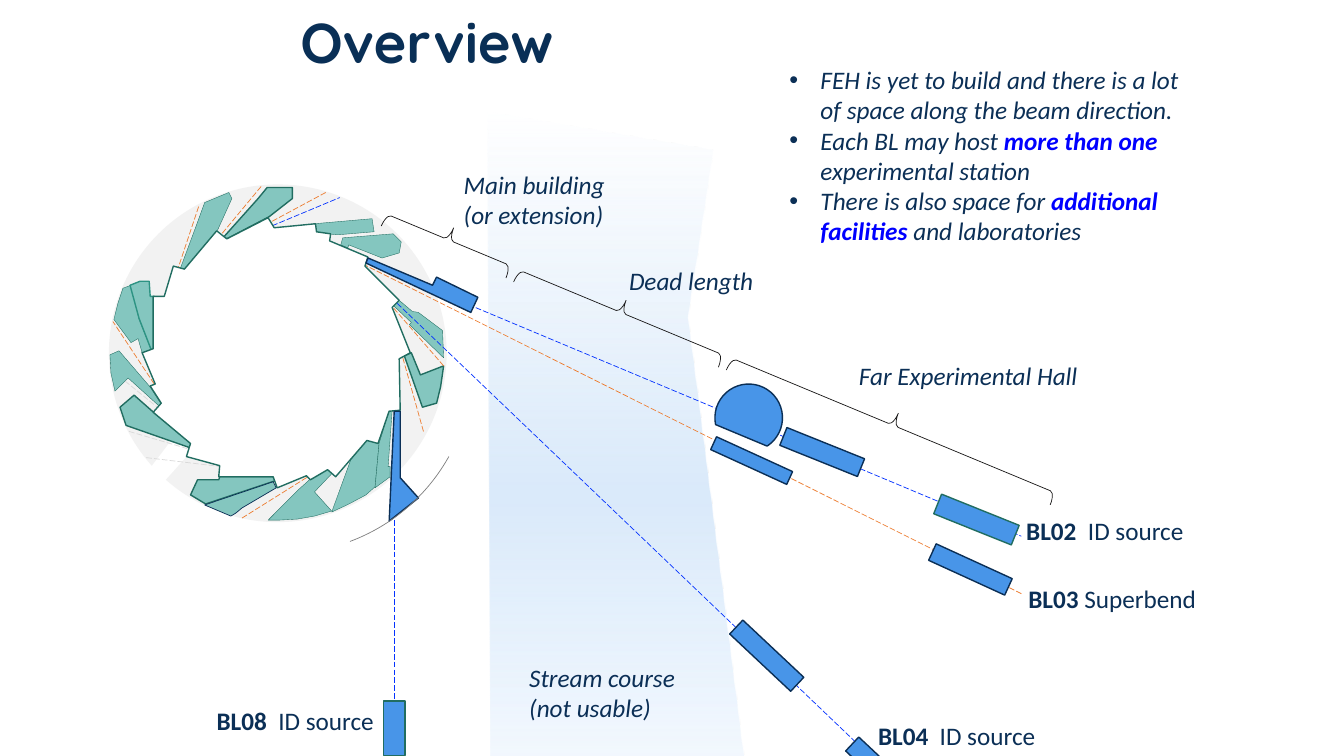
from dataclasses import dataclass

from lxml import etree
from pptx import Presentation
from pptx.dml.color import RGBColor
from pptx.enum.dml import MSO_LINE_DASH_STYLE as Dash
from pptx.enum.shapes import MSO_CONNECTOR, MSO_SHAPE as Preset
from pptx.enum.text import MSO_AUTO_SIZE
from pptx.oxml import parse_xml
from pptx.oxml.ns import nsdecls, qn
from pptx.util import Inches, Pt

COLORS = {"title": "092F56", "navy": "0B2F56", "emphasis": "0000FF", "station": "4895E8",
          "hall": "84C6BF", "hall_edge": "216D61", "hall_light_edge": "2D9383",
          "floor": "F2F2F2", "white": "FFFFFF", "id_beam": "0432FF", "bend_beam": "ED7D31",
          "unused_beam": "D9D9D9", "brace": "181717", "arc": "808080",
          "stream": "DAEAFA", "stream_end": "D8EAFD"}

# Each hall: edge colour, edge width, corners
RING_HALLS = [
    ("hall_edge", 0.25, [(3.26, 4.65), (3.07, 4.76), (2.97, 4.85), (2.66, 5.16), (2.77, 5.16), (2.95, 5.15),
                         (3.12, 5.12), (3.29, 5.07), (3.12, 4.88), (3.3, 4.69)]),
    ("hall_edge", 0.25, [(3.64, 4.36), (3.48, 4.56), (3.29, 5.08), (3.42, 5.02), (3.48, 4.99), (3.63, 4.91),
                         (3.72, 4.83), (3.76, 4.4)]),
    ("hall_edge", 0.25, [(3.86, 4.07), (3.76, 4.4), (3.72, 4.84), (3.87, 4.73), (3.87, 4.63), (3.85, 4.63),
                         (3.89, 4.07)]),
    ("hall_edge", 1, [(4.01, 3.53), (4.19, 4.04), (4.33, 4), (4.37, 3.84), (4.4, 3.63), (4.17, 3.72),
                      (4.08, 3.5)]),
    ("hall_edge", 0.25, [(3.9, 3.03), (4.08, 3.2), (4.06, 3.22), (4.4, 3.55), (4.39, 3.28), (4.15, 3.1),
                         (4.09, 3.09), (3.96, 2.98)]),
    ("hall_edge", 1, [(2.71, 4.73), (2.18, 4.73), (2.17, 4.76), (1.96, 4.76), (1.89, 4.91), (2.04, 5),
                      (2.1, 4.98), (2.73, 4.77)]),
    ("white", 1, [(1.44, 4.72), (1.58, 4.82), (1.84, 4.53), (1.86, 4.44), (1.7, 4.38)]),
    ("hall_edge", 0.25, [(1.6, 4.01), (1.49, 3.84), (1.18, 3.48), (1.09, 3.52), (1.1, 3.7), (1.14, 3.88),
                         (1.27, 3.75), (1.58, 4.03)]),
    ("hall_edge", 0.25, [(1.5, 3.47), (1.38, 3.17), (1.3, 2.83), (1.22, 2.86), (1.17, 3.01), (1.13, 3.17),
                         (1.3, 3.4), (1.37, 3.36), (1.41, 3.5)]),
    ("hall_edge", 0.25, [(1.84, 2.67), (2.16, 2.28), (2.3, 1.97), (2.27, 1.91), (2.03, 2.01), (1.95, 2.23),
                         (1.79, 2.66)]),
    ("hall_edge", 0.25, [(3.14, 2.31), (3.35, 2.33), (3.71, 2.3), (3.69, 2.17), (3.12, 2.22)]),
    ("hall_edge", 0.25, [(3.38, 2.43), (3.45, 2.46), (3.46, 2.43), (3.79, 2.56), (3.96, 2.51), (3.98, 2.4),
                         (3.9, 2.32), (3.4, 2.36)]),
    ("hall_edge", 1, [(2.25, 2.37), (2.67, 2.15), (2.9, 1.97), (2.9, 1.86), (2.65, 1.86), (2.56, 1.97),
                      (2.22, 2.35)]),
]
OUTER_HALLS = [
    ("hall_light_edge", 1, [(1.5, 3.47), (1.38, 3.16), (1.29, 2.83), (1.39, 2.79), (1.48, 2.79), (1.49, 2.94),
                            (1.53, 2.94), (1.53, 3.46)]),
    ("hall_edge", 1, [(1.9, 4.4), (1.5, 4.07), (1.33, 3.92), (1.19, 4.04), (1.25, 4.22), (1.88, 4.44)]),
]
BL06_HALL = ("navy", 0.5, [(2.71, 4.78), (2.03, 5.01), (2.29, 5.12), (2.34, 5.09), (2.4, 5.04), (2.74, 4.84)])
RING_CORE = [
    (1.85, 4.53), (2.18, 4.62), (2.17, 4.73), (2.71, 4.73), (2.75, 4.84), (3.04, 4.72), (3.08, 4.76),
    (3.25, 4.66), (3.33, 4.73), (3.64, 4.37), (3.75, 4.4), (3.86, 4.08), (3.97, 4.07), (3.96, 3.56),
    (4.07, 3.5), (3.89, 3.05), (3.96, 2.98), (3.62, 2.64), (3.65, 2.55), (3.27, 2.39), (3.28, 2.32),
    (3.14, 2.3), (3.13, 2.22), (2.72, 2.26), (2.66, 2.16), (2.25, 2.37), (2.15, 2.29), (1.83, 2.67),
    (1.72, 2.64), (1.63, 2.94), (1.52, 2.94), (1.52, 3.46), (1.41, 3.5), (1.54, 3.81), (1.49, 3.83),
    (1.6, 4), (1.52, 4.09), (1.89, 4.4)]
BEAMS = {
    "id_beam": [(3.91, 4.07, 3.91, 7.5), (3.64, 2.6, 10.13, 5.32), (2.7, 2.24, 3.37, 1.96)],
    "bend_beam": [(4.2, 4.28, 3.99, 3.53), (10.13, 5.89, 3.62, 2.63), (3.23, 1.91, 2.69, 2.2),
                  (2.59, 1.85, 2.2, 2.32), (1.97, 2.05, 1.77, 2.65), (2.4, 5.14, 3.07, 4.72),
                  (4.4, 3.63, 3.89, 3.04), (1.53, 3.81, 1.12, 3.19)],
    "unused_beam": [(1.45, 4.54, 2.2, 4.63), (1.28, 4.28, 1.89, 4.46), (1.24, 3.78, 1.56, 4.04)],
}
BL04_BEAM = (3.94, 3.01, 8.62, 7.49)
STREAM = [(4.84, 1.11), (4.87, 8.7), (8.76, 8.31), (7.38, 7.56), (6.82, 3.15), (7.07, 1.49)]
BL02_FRONT = [(3.63, 2.61), (4.67, 3.1), (4.74, 2.95), (4.33, 2.75), (4.29, 2.83), (3.65, 2.56)]
BL08_FRONT = [(3.91, 4.08), (3.86, 5.17), (4.15, 4.94), (3.97, 4.74), (3.97, 4.08)]
# left, top, width, height, rotation, edge colour
STATIONS = [(7.74, 4.39, 0.83, 0.19, 21.9, "navy"), (9.27, 5.05, 0.83, 0.21, 21.9, "hall_edge"),
            (7.04, 4.5, 0.83, 0.14, 24.6, "navy"), (9.21, 5.56, 0.83, 0.18, 24.6, "navy"),
            (7.19, 6.41, 0.83, 0.19, 43.2, "navy"), (8.34, 7.57, 0.83, 0.19, 43.2, "navy"),
            (3.64, 7.12, 0.54, 0.21, 90, "hall_edge")]
BRACES = [(4.32, 1.71, 0.26, 1.34), (6.03, 2, 0.26, 2.2), (8.73, 2.48, 0.26, 3.48)]
BEAMLINES = [(10.08, 5.06, "BL02", "  ID source"), (10.1, 5.74, "BL03 ", "Superbend"),
             (8.61, 7.1, "BL04", "  ID source"), (2.05, 6.95, "BL08", "  ID source")]
ZONES = [(4.5, 1.63, 1.71, 0.71, ["Main building (or extension)"]),
         (8.42, 3.53, 2.78, 0.4, ["Far Experimental Hall"]),
         (5.15, 6.52, 2.78, 0.71, ["Stream course", "(not usable)"]),
         (6.14, 2.58, 1.71, 0.4, ["Dead length"])]
EMPHASIS = {"bold": True, "color": "emphasis"}
REMARKS = [
    [("FEH is yet to build and there is a lot of space along the beam direction.", {})],
    [("Each BL may host ", {}), ("more than one ", EMPHASIS), ("experimental station", {})],
    [("There is also space for ", {}), ("additional facilities", EMPHASIS), (" and laboratories", {})],
]


@dataclass
class Box:
    left: float
    top: float
    width: float
    height: float

    def inner(self, left, top, width, height):
        return Box(self.left + left, self.top + top, width, height)

    def lengths(self):
        return [Inches(v) for v in (self.left, self.top, self.width, self.height)]


def rgb(name):
    return RGBColor.from_string(COLORS[name])


def paint(shape, fill=None, edge=None, width=1):
    shape.shadow.inherit = False
    if fill:
        shape.fill.solid()
        shape.fill.fore_color.rgb = rgb(fill)
    else:
        shape.fill.background()
    if edge:
        shape.line.color.rgb = rgb(edge)
        shape.line.width = Pt(width)
    else:
        shape.line.fill.background()


def add_outline(slide, box, corners):
    points = [(Inches(box.left + x), Inches(box.top + y)) for x, y in corners]
    builder = slide.shapes.build_freeform(*points[0], scale=1.0)
    builder.add_line_segments(points[1:], close=True)
    return builder.convert_to_shape()


def add_preset(slide, preset, box, rotation=0, adjustments=()):
    shape = slide.shapes.add_shape(preset, *box.lengths())
    shape.rotation = rotation
    for index, value in enumerate(adjustments):
        shape.adjustments[index] = value
    return shape


def add_text(slide, box, paragraphs, bullets=False, **base):
    """Write paragraphs of (text, style) runs; base holds the shared style."""
    frame = slide.shapes.add_textbox(*box.lengths()).text_frame
    frame.word_wrap = True
    frame.auto_size = MSO_AUTO_SIZE.SHAPE_TO_FIT_TEXT
    for index, runs in enumerate(paragraphs):
        paragraph = frame.add_paragraph() if index else frame.paragraphs[0]
        if bullets:
            props = paragraph._p.get_or_add_pPr()
            props.set("marL", str(Inches(0.31)))
            props.set("indent", str(-Inches(0.31)))
            etree.SubElement(props, qn("a:buFont")).set("typeface", "Arial")
            etree.SubElement(props, qn("a:buChar")).set("char", "•")
        for text, style in runs:
            look = {"size": 18, "name": "Calibri", "color": "navy", **base, **style}
            run = paragraph.add_run()
            run.text = text
            run.font.size = Pt(look["size"])
            run.font.name = look["name"]
            run.font.color.rgb = rgb(look["color"])
            run.font.bold = look.get("bold", False)
            run.font.italic = look.get("italic", False)


def add_beam(slide, box, ends, color):
    x1, y1, x2, y2 = ends
    beam = slide.shapes.add_connector(MSO_CONNECTOR.STRAIGHT, Inches(box.left + x1), Inches(box.top + y1),
                                      Inches(box.left + x2), Inches(box.top + y2))
    beam.line.color.rgb = rgb(color)
    beam.line.width = Pt(0.5)
    beam.line.dash_style = Dash.LONG_DASH
    etree.SubElement(beam._element.spPr, qn("a:effectLst"))


def add_halls(slide, box, halls):
    for edge, width, corners in halls:
        paint(add_outline(slide, box, corners), "white" if edge == "white" else "hall", edge, width)


def add_stream(slide, box):
    """Band that fades out at its top and bottom."""
    stream = add_outline(slide, box, STREAM)
    paint(stream)
    stream.fill.gradient()
    stream.fill.gradient_angle = 270
    stops = stream._element.spPr.find(qn("a:gradFill")).find(qn("a:gsLst"))
    fade = '<a:alpha val="0"/>'
    xml = "".join(f'<a:gs pos="{pos}"><a:srgbClr val="{COLORS[name]}">{alpha}</a:srgbClr></a:gs>'
                  for pos, name, alpha in [(0, "stream", fade), (50000, "stream", ""),
                                           (100000, "stream_end", fade)])
    stops.getparent().replace(stops, parse_xml(f'<a:gsLst {nsdecls("a")}>{xml}</a:gsLst>'))


def add_ring(slide, box):
    """Storage ring with its halls and all beams."""
    paint(add_preset(slide, Preset.OVAL, box.inner(1.08, 1.83, 3.35, 3.35)), "floor")
    add_halls(slide, box, RING_HALLS)
    for color, beams in BEAMS.items():
        for ends in beams:
            add_beam(slide, box, ends, color)
    add_halls(slide, box, OUTER_HALLS)
    paint(add_outline(slide, box, RING_CORE), "white", "hall_edge")
    add_beam(slide, box, BL04_BEAM, "id_beam")
    add_halls(slide, box, [BL06_HALL])


def add_labels(slide, box):
    for left, top, beamline, source in BEAMLINES:
        add_text(slide, box.inner(left, top, 2.18, 0.4), [[(beamline, {"bold": True}), (source, {})]])
    for *place, lines in ZONES:
        add_text(slide, box.inner(*place), [[(line, {})] for line in lines], italic=True)
    for place in BRACES:
        brace = add_preset(slide, Preset.RIGHT_BRACE, box.inner(*place), 292.6, (0.2, 0.5))
        paint(brace, edge="brace", width=0.5)


def add_stations(slide, box):
    for *place, rotation, edge in STATIONS:
        paint(add_preset(slide, Preset.RECTANGLE, box.inner(*place), rotation), "station", edge)
    dome = add_preset(slide, Preset.CHORD, box.inner(7.09, 3.81, 0.67, 0.67), 123.4, (27, 176.12))
    paint(dome, "station", "navy")
    for front in (BL02_FRONT, BL08_FRONT):
        paint(add_outline(slide, box, front), "station", "navy")
    road = add_preset(slide, Preset.ARC, box.inner(0.94, 1.74, 3.75, 3.75), adjustments=(17.49, 41.7))
    paint(road, edge="arc", width=0.5)


def main():
    deck = Presentation()
    deck.slide_width, deck.slide_height = Inches(13.33), Inches(7.5)
    slide = deck.slides.add_slide(deck.slide_layouts[6])
    site = Box(0, 0, 13.33, 7.5)
    add_text(slide, Box(2.88, 0.03, 9.8, 0.77), [[("Overview", {})]],
             size=40, name="Quicksand", color="title", bold=True)
    for add_part in (add_stream, add_ring, add_labels):
        add_part(slide, site)
    add_text(slide, Box(7.73, 0.59, 4.27, 1.92), REMARKS, bullets=True, italic=True)
    add_stations(slide, site)
    deck.save("out.pptx")


if __name__ == "__main__":
    main()
